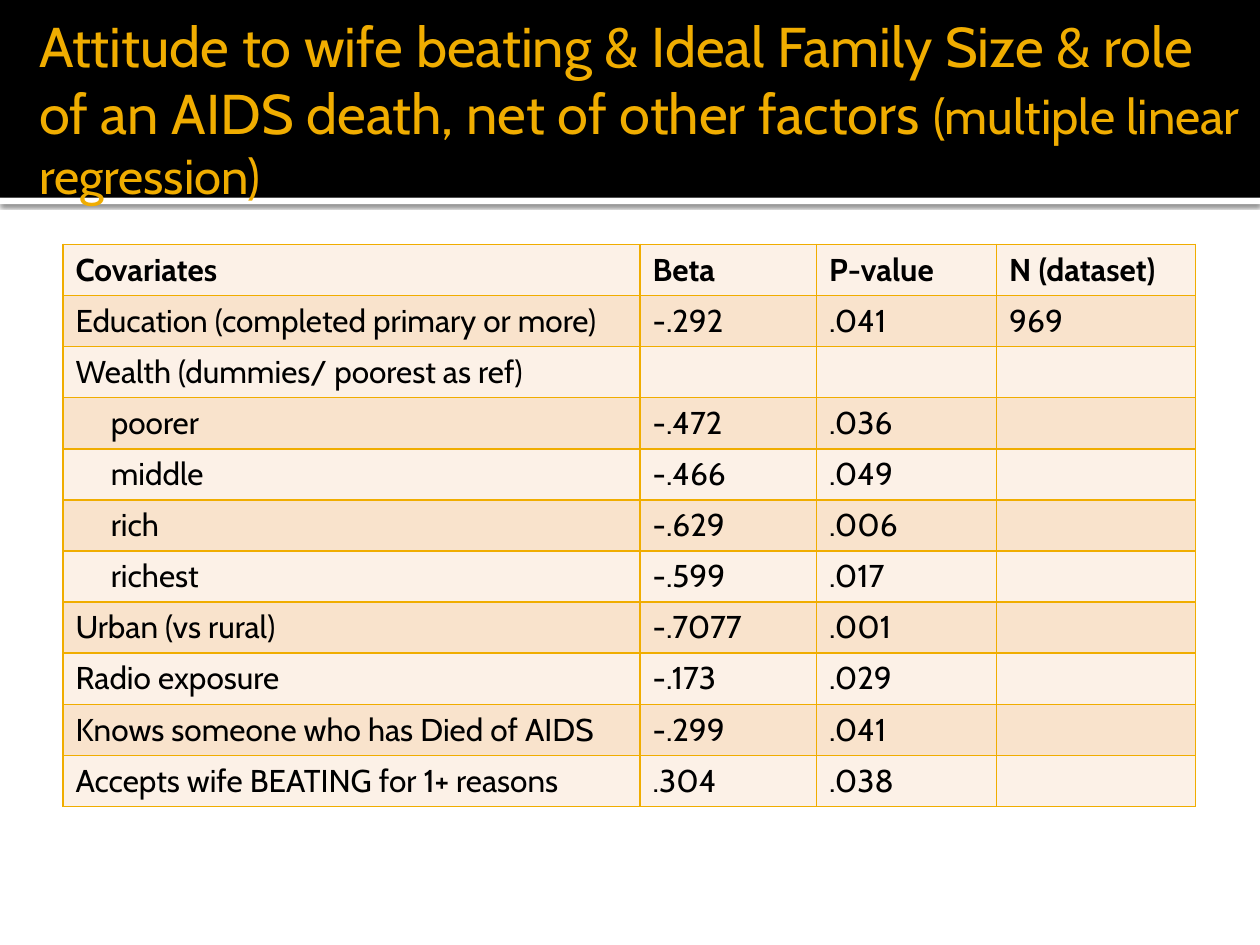
from dataclasses import dataclass

from lxml.etree import SubElement
from pptx import Presentation
from pptx.dml.color import RGBColor
from pptx.enum.shapes import MSO_SHAPE
from pptx.enum.text import MSO_ANCHOR, MSO_AUTO_SIZE, PP_ALIGN
from pptx.oxml import parse_xml
from pptx.oxml.ns import nsdecls, qn
from pptx.slide import Slide
from pptx.util import Inches, Pt

COLUMN_WIDTHS = (4.58, 1.4, 1.43, 1.58)
ROW_HEIGHT = 4.46 / 11
INDENTED = {"poorer", "middle", "rich", "richest"}
ROWS = [
    ("Covariates", "Beta", "P-value", "N (dataset)"),
    ("Education (completed primary or more)", "-.292", ".041", "969"),
    ("Wealth (dummies/ poorest as ref)", "", "", ""),
    ("poorer", "-.472", ".036", ""),
    ("middle", "-.466", ".049", ""),
    ("rich", "-.629", ".006", ""),
    ("richest", "-.599", ".017", ""),
    ("Urban (vs rural)", "-.7077", ".001", ""),
    ("Radio exposure", "-.173", ".029", ""),
    ("Knows someone who has Died of AIDS", "-.299", ".041", ""),
    ("Accepts wife BEATING for 1+ reasons", ".304", ".038", ""),
]


def color(value):
    return RGBColor.from_string(value)


@dataclass
class SlideBuilder:
    """Builds the elements of one slide in a shared style."""

    slide: Slide
    font: str = "Cabin"
    accent: str = "F0AD00"
    text_color: str = "000000"
    bands: tuple = ("FCF1E7", "F9E3CC")

    def add_run(self, paragraph, text, size, text_color, bold=False):
        run = paragraph.add_run()
        run.text = text
        run.font.name = self.font
        run.font.size = Pt(size)
        run.font.bold = bold
        run.font.color.rgb = color(text_color)

    def add_bar(self, top, height, fill, shadow=False):
        shape = self.slide.shapes.add_shape(
            MSO_SHAPE.RECTANGLE, 0, Inches(top), Inches(10), Inches(height))
        shape.shadow.inherit = False
        shape.fill.solid()
        shape.fill.fore_color.rgb = color(fill)
        shape.line.fill.background()
        if shadow:
            effects = shape._element.spPr.find(qn("a:effectLst"))
            effects.append(parse_xml(
                f'<a:outerShdw {nsdecls("a")} blurRad="{Pt(2.5)}" dist="{Pt(0.8)}" '
                'dir="5400000" rotWithShape="0"><a:srgbClr val="000000">'
                '<a:alpha val="60000"/></a:srgbClr></a:outerShdw>'))

    def add_title(self, parts):
        title = self.slide.shapes.title
        title.left, title.top = Inches(0.21), Inches(0.17)
        title.width, title.height = Inches(9.79), Inches(1.37)
        frame = title.text_frame
        frame.auto_size = MSO_AUTO_SIZE.NONE
        frame.word_wrap = True
        frame.vertical_anchor = MSO_ANCHOR.MIDDLE
        frame.margin_left = Inches(0.1)
        frame.margin_right = frame.margin_top = frame.margin_bottom = Inches(0.05)
        paragraph = frame.paragraphs[0]
        paragraph.alignment = PP_ALIGN.LEFT
        for text, size in parts:
            self.add_run(paragraph, text, size, self.accent)
        self.slide.shapes._spTree.append(title._element)

    def add_borders(self, cell):
        properties = cell._tc.get_or_add_tcPr()
        for side in ("lnL", "lnR", "lnT", "lnB"):
            line = SubElement(properties, qn(f"a:{side}"), w=str(Pt(1)))
            fill = SubElement(line, qn("a:solidFill"))
            SubElement(fill, qn("a:srgbClr"), val=self.accent)

    def add_table(self, left, top, rows):
        table = self.slide.shapes.add_table(
            len(rows), len(COLUMN_WIDTHS), Inches(left), Inches(top),
            Inches(sum(COLUMN_WIDTHS)), Inches(ROW_HEIGHT * len(rows))).table
        for column, width in zip(table.columns, COLUMN_WIDTHS):
            column.width = Inches(width)
        for row_index, values in enumerate(rows):
            table.rows[row_index].height = Inches(ROW_HEIGHT)
            for column_index, text in enumerate(values):
                cell = table.cell(row_index, column_index)
                self.add_borders(cell)
                cell.fill.solid()
                cell.fill.fore_color.rgb = color(self.bands[row_index % 2])
                if text in INDENTED:
                    cell.margin_left = Inches(0.38)
                if text:
                    self.add_run(cell.text_frame.paragraphs[0], text, 18,
                                 self.text_color, bold=row_index == 0)


def main():
    presentation = Presentation()
    presentation.slide_width, presentation.slide_height = Inches(10), Inches(7.5)
    builder = SlideBuilder(presentation.slides.add_slide(presentation.slide_layouts[5]))
    builder.add_bar(1.57, 0.05, "FFFFFF", shadow=True)
    builder.add_bar(0, 1.57, "000000")
    builder.add_title([
        ("Attitude to wife beating & Ideal Family Size & role of an AIDS death, "
         "net of other factors ", 32),
        ("(multiple linear regression)", 28),
    ])
    builder.add_table(0.5, 1.94, ROWS)
    presentation.save("out.pptx")


if __name__ == "__main__":
    main()
